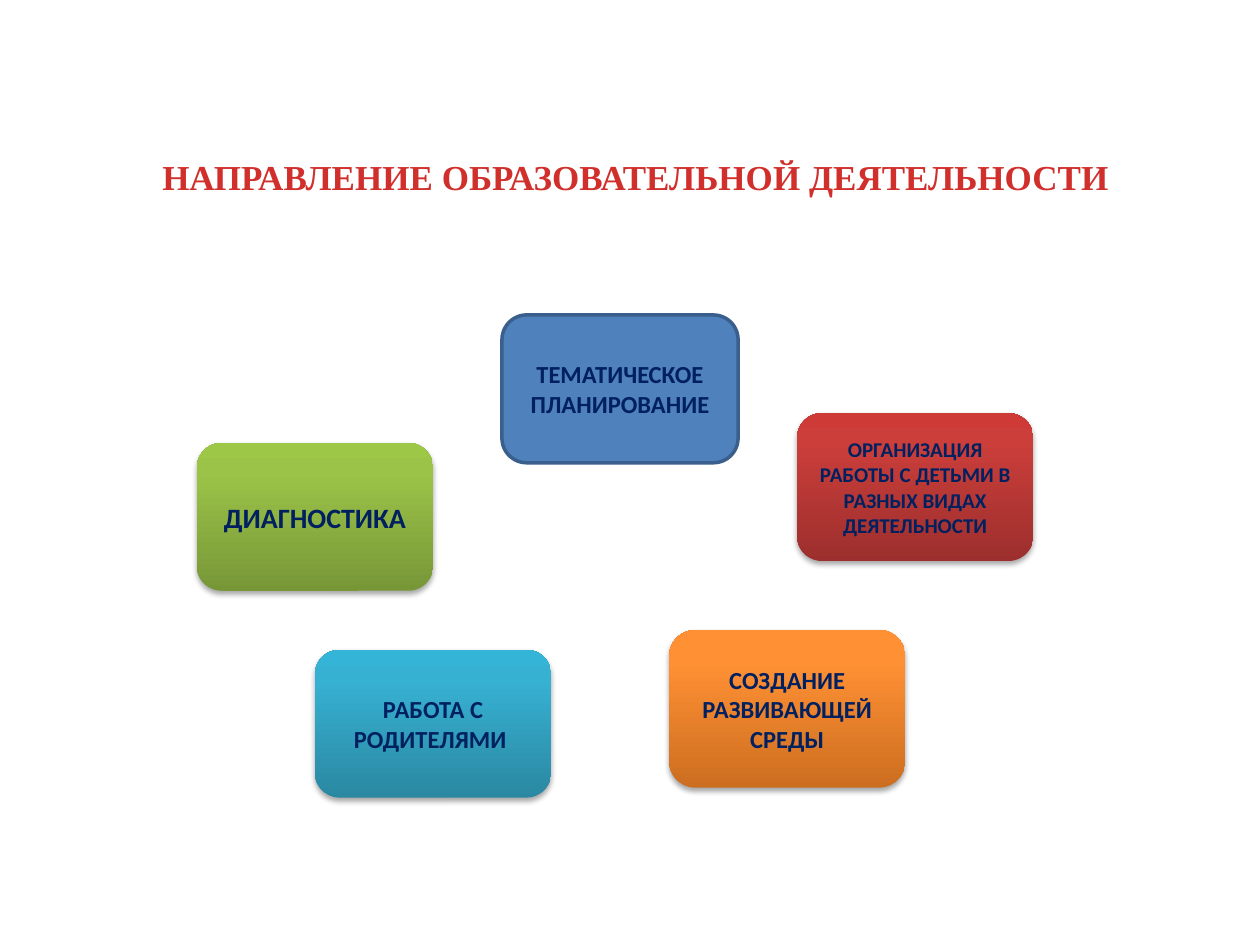
import pptx
import pptx.util
import pptx.dml.color
import pptx.enum.shapes
import pptx.enum.text
import pptx.oxml
import pptx.oxml.ns
from pptx.util import Cm

COLORS = {
    "title": "D02F2C",
    "text": "002060",
    "blue": "4F81BD",
    "blue edge": "3A5F8C",
    "shadow": "000000",
}
# Gradient stops from the bottom edge to the top edge
GRADIENTS = {
    "green": ("779737", "9BC348", "9DC746"),
    "red": ("9C2F2D", "CB3E3A", "CE3B37"),
    "teal": ("2A88A2", "37B1D2", "34B4D6"),
    "orange": ("CC6E20", "FF9034", "FF9136"),
}
STOPS = (0, 80000, 100000)


def rgb(name):
    return pptx.dml.color.RGBColor.from_string(COLORS[name])


def add_span(para, text, font, size, color):
    para.alignment = pptx.enum.text.PP_ALIGN.CENTER
    span = para.add_run()
    span.text = text
    span.font.name = font
    span.font.size = pptx.util.Pt(size)
    span.font.bold = True
    span.font.color.rgb = rgb(color)


deck = pptx.Presentation()
deck.slide_width, deck.slide_height = Cm(25.4), Cm(19.05)
page = deck.slides.add_slide(deck.slide_layouts[5])

# Title
title = page.shapes.title
title.left, title.top, title.width, title.height = Cm(1.38), Cm(3.14), Cm(22.86), Cm(1.63)
frame = title.text_frame
frame.auto_size = pptx.enum.text.MSO_AUTO_SIZE.NONE
frame.vertical_anchor = pptx.enum.text.MSO_ANCHOR.TOP
frame.margin_top = 0
add_span(frame.paragraphs[0], "НАПРАВЛЕНИЕ ОБРАЗОВАТЕЛЬНОЙ ДЕЯТЕЛЬНОСТИ",
         "Times New Roman", 20, "title")

# Activity boxes: text, left, top, height, text size, fill
activities = [
    ("ДИАГНОСТИКА", 3.97, 8.93, 2.98, 16, "green"),
    ("ТЕМАТИЧЕСКОЕ ПЛАНИРОВАНИЕ", 10.12, 6.35, 2.98, 14, "blue"),
    ("ОРГАНИЗАЦИЯ РАБОТЫ С ДЕТЬМИ В РАЗНЫХ ВИДАХ ДЕЯТЕЛЬНОСТИ",
     16.07, 8.33, 2.98, 12, "red"),
    ("РАБОТА С РОДИТЕЛЯМИ ", 6.35, 13.1, 2.98, 14, "teal"),
    ("СОЗДАНИЕ РАЗВИВАЮЩЕЙ СРЕДЫ", 13.49, 12.7, 3.18, 14, "orange"),
]
for text, left, top, height, size, fill in activities:
    box = page.shapes.add_shape(pptx.enum.shapes.MSO_SHAPE.ROUNDED_RECTANGLE,
                                Cm(left), Cm(top), Cm(4.76), Cm(height))
    box.shadow.inherit = False

    if fill in GRADIENTS:
        # Vertical three-stop gradient and a soft shadow below
        box.line.fill.background()
        box.fill.gradient()
        box.fill.gradient_angle = 90
        properties = box._element.spPr
        stop_list = properties.find(".//" + pptx.oxml.ns.qn("a:gsLst"))
        for stop in list(stop_list):
            stop_list.remove(stop)
        for position, color in zip(STOPS, GRADIENTS[fill]):
            stop_list.append(pptx.oxml.parse_xml(
                f'<a:gs {pptx.oxml.ns.nsdecls("a")} pos="{position}">'
                f'<a:srgbClr val="{color}"/></a:gs>'))
        effects = properties.find(pptx.oxml.ns.qn("a:effectLst"))
        effects.append(pptx.oxml.parse_xml(
            f'<a:outerShdw {pptx.oxml.ns.nsdecls("a")} blurRad="40000" dist="23000"'
            f' dir="5400000" rotWithShape="0"><a:srgbClr val="{COLORS["shadow"]}">'
            '<a:alpha val="35000"/></a:srgbClr></a:outerShdw>'))
    else:
        box.fill.solid()
        box.fill.fore_color.rgb = rgb(fill)
        box.line.color.rgb = rgb("blue edge")
        box.line.width = pptx.util.Pt(2)

    frame = box.text_frame
    frame.word_wrap = True
    frame.vertical_anchor = pptx.enum.text.MSO_ANCHOR.MIDDLE
    add_span(frame.paragraphs[0], text, "Calibri", size, "text")

deck.save("out.pptx")
